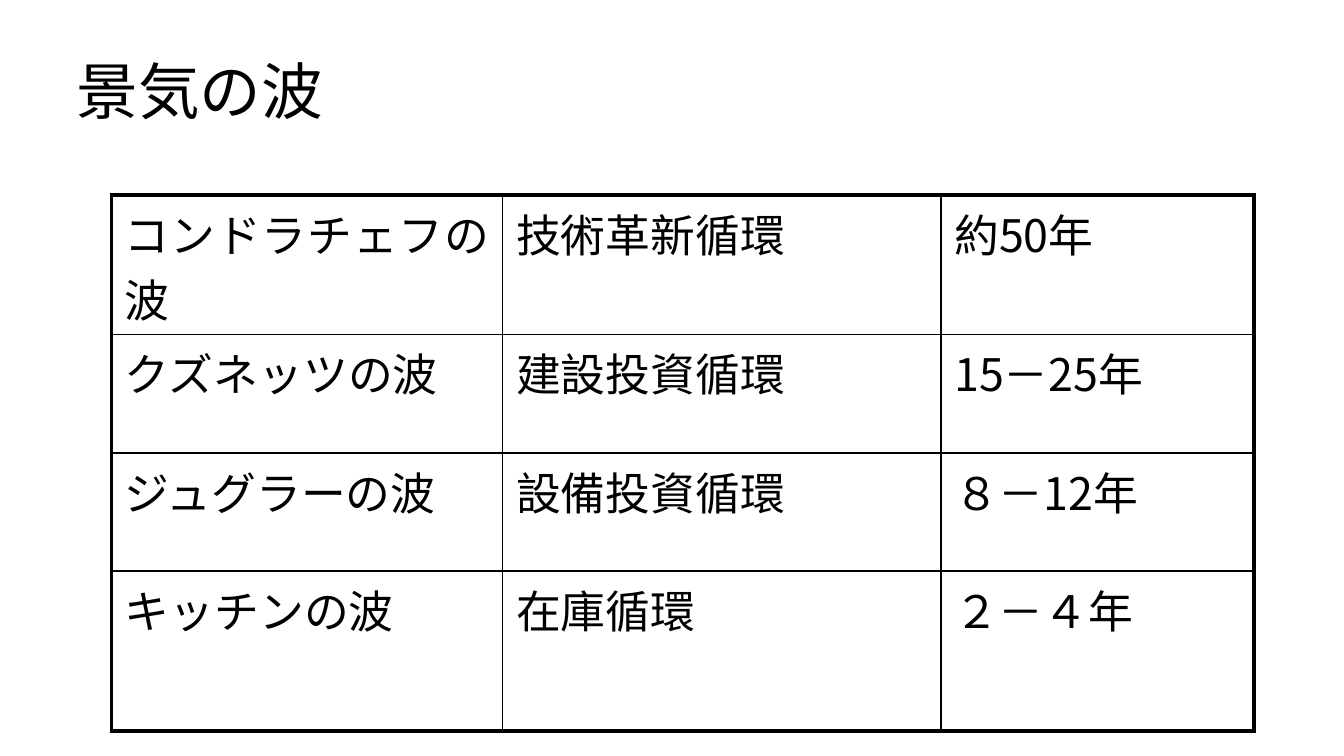
from pptx import Presentation
from pptx.dml.color import RGBColor
from pptx.enum import text
from pptx.oxml.ns import qn
from pptx.util import Inches, Pt
from lxml import etree

# Content
TITLE = "景気の波"
WAVES = [
    ("コンドラチェフの波　", "技術革新循環　", "約50年"),
    ("クズネッツの波", "建設投資循環", "15－25年"),
    ("ジュグラーの波", "設備投資循環", "８－12年"),
    ("キッチンの波", "在庫循環", "２－４年"),
]

# Format
FONT = "Noto Sans CJK JP"
COLORS = {"ink": "000000", "paper": "FFFFFF"}
COLUMN_WIDTHS = [2.91, 3.26, 2.33]
ROW_HEIGHTS = [1.04, 0.88, 0.88, 1.19]
OUTER_LINE, INNER_LINE = 2.25, 1


def write(frame, words, size, align=None, line_spacing=None, before=None):
    """Fill the first paragraph; before is a percentage of the line."""
    para = frame.paragraphs[0]
    if align is not None:
        para.alignment = align
    if line_spacing:
        para.line_spacing = line_spacing
    if before:
        gap = etree.SubElement(para._p.get_or_add_pPr(), qn("a:spcBef"))
        etree.SubElement(gap, qn("a:spcPct"), val=str(before * 1000))
    span = para.add_run()
    span.text = words
    span.font.size = Pt(size)
    span.font.name = FONT
    span.font.color.rgb = RGBColor.from_string(COLORS["ink"])
    etree.SubElement(span.font._element, qn("a:ea"), typeface=FONT)


def set_insets(part, side, end):
    part.margin_left = part.margin_right = Inches(side)
    part.margin_top = part.margin_bottom = Inches(end)


def add_borders(cell, outer_sides):
    props = cell._tc.get_or_add_tcPr()
    for side in "LRTB":
        width = OUTER_LINE if side in outer_sides else INNER_LINE
        line = etree.SubElement(props, qn("a:ln" + side), w=str(Pt(width)))
        fill = etree.SubElement(line, qn("a:solidFill"))
        etree.SubElement(fill, qn("a:srgbClr"), val=COLORS["ink"])


# Page in 16:9
deck = Presentation()
deck.slide_width = Inches(10)
deck.slide_height = deck.slide_width * 9 // 16
page = deck.slides.add_slide(deck.slide_layouts[6])
page.background.fill.solid()
page.background.fill.fore_color.rgb = RGBColor.from_string(COLORS["paper"])

# Title
box = page.shapes.add_textbox(Inches(0.5), Inches(0.23), Inches(9), Inches(0.94))
frame = box.text_frame
frame.word_wrap = True
frame.vertical_anchor = text.MSO_ANCHOR.MIDDLE
set_insets(frame, 0.07, 0.04)
write(frame, TITLE, 33, line_spacing=0.9)

# Table of waves
last_row, last_column = len(WAVES) - 1, len(COLUMN_WIDTHS) - 1
table = page.shapes.add_table(
    len(WAVES), len(COLUMN_WIDTHS), Inches(0.83), Inches(1.45),
    Inches(sum(COLUMN_WIDTHS)), Inches(sum(ROW_HEIGHTS))).table
table.first_row = table.horz_banding = False
for column, width in zip(table.columns, COLUMN_WIDTHS):
    column.width = Inches(width)
for row, height in zip(table.rows, ROW_HEIGHTS):
    row.height = Inches(height)

for r, wave in enumerate(WAVES):
    for c, words in enumerate(wave):
        cell = table.cell(r, c)
        edges = {"L": c == 0, "R": c == last_column,
                 "T": r == 0, "B": r == last_row}
        add_borders(cell, [side for side, outer in edges.items() if outer])
        cell.fill.background()
        set_insets(cell, 0.1, 0.04)
        write(cell.text_frame, words, 24,
              align=text.PP_ALIGN.JUSTIFY, before=20)

deck.save("out.pptx")
